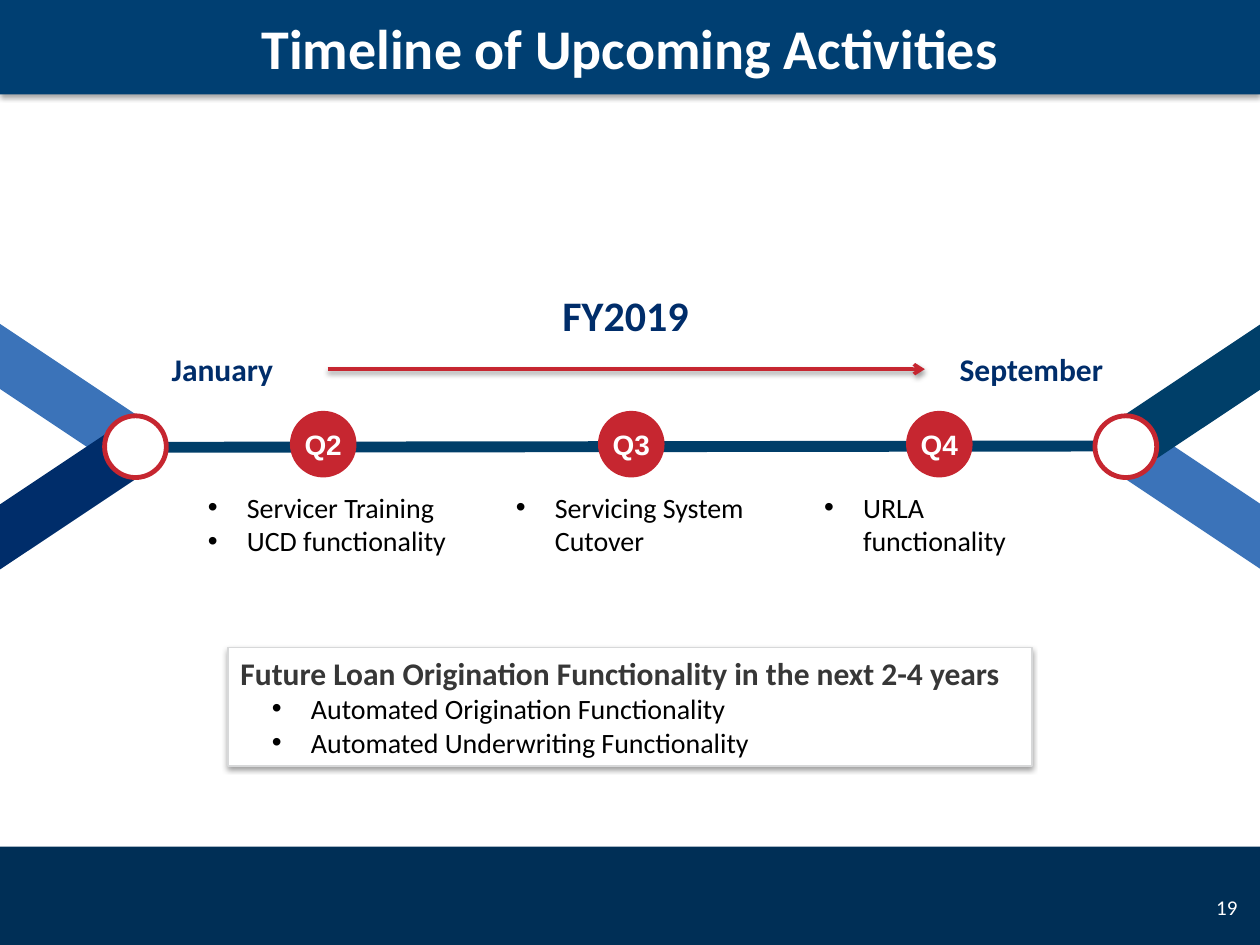
import pptx
import pptx.util
import pptx.dml.color
import pptx.enum.shapes
import pptx.enum.text
import pptx.oxml
import pptx.oxml.ns

Inches, Pt = pptx.util.Inches, pptx.util.Pt
RGB = pptx.dml.color.RGBColor.from_string
qn = pptx.oxml.ns.qn
KIND = pptx.enum.shapes.MSO_SHAPE
ALIGN = pptx.enum.text.PP_ALIGN
ANCHOR = pptx.enum.text.MSO_ANCHOR
SPACE = pptx.oxml.ns.nsdecls("a")

COLORS = {
    "white": "FFFFFF", "black": "000000", "gray": "373737", "edge": "D7D8D9",
    "head": "003F72", "foot": "002F56", "navy": "002D6A", "teal": "003F69",
    "axis": "003E69", "blue": "3B73B9", "red": "C62630",
}
STYLES = {
    "title": {"name": "Calibri", "size": Pt(32), "bold": True},
    "year": {"name": "Calibri", "size": Pt(24), "bold": True},
    "label": {"name": "Calibri", "size": Pt(18), "bold": True},
    "item": {"name": "Calibri", "size": Pt(16), "bold": False},
    "mark": {"name": "Arial", "size": Pt(16), "bold": True},
    "page": {"name": "Calibri", "size": Pt(12), "bold": False},
}

deck = pptx.Presentation()
deck.slide_width, deck.slide_height = Inches(10), Inches(7.5)
slide = deck.slides.add_slide(deck.slide_layouts[6])
shapes = slide.shapes


def draw(kind, place, fill, edge=None, width=0):
    """Add a filled shape, or a text box when kind is None."""
    place = [Inches(n) for n in place]
    if kind is None:
        return shapes.add_textbox(*place)
    shape = shapes.add_shape(kind, *place)
    shape.shadow.inherit = False
    shape.fill.solid()
    shape.fill.fore_color.rgb = RGB(COLORS[fill])
    if edge:
        shape.line.color.rgb = RGB(COLORS[edge])
        shape.line.width = Pt(width)
    else:
        shape.line.fill.background()
    return shape


def write(shape, rows, align=ALIGN.CENTER, anchor=ANCHOR.TOP, inset=None):
    """Fill a shape with rows of (text, style, color, bullet margin)."""
    frame = shape.text_frame
    frame.word_wrap = True
    frame.vertical_anchor = anchor
    if inset is not None:
        for side in ("left", "top", "right", "bottom"):
            setattr(frame, "margin_" + side, Inches(inset))
    for i, (text, style, color, margin) in enumerate(rows):
        para = frame.add_paragraph() if i else frame.paragraphs[0]
        para.alignment = align
        if margin:
            props = para._p.get_or_add_pPr()
            props.set("marL", str(Inches(margin)))
            props.set("indent", str(Inches(-0.31)))
            props.append(pptx.oxml.parse_xml(f'<a:buFont {SPACE} typeface="Arial"/>'))
            props.append(pptx.oxml.parse_xml(f'<a:buChar {SPACE} char="•"/>'))
        run = para.add_run()
        run.text = text
        for key, value in STYLES[style].items():
            setattr(run.font, key, value)
        run.font.color.rgb = RGB(COLORS[color])


# Header, footer and page number
draw(KIND.RECTANGLE, (0, 6.72, 10, 0.8), "foot")
head = draw(KIND.RECTANGLE, (0, 0, 10, 0.75), "head")
write(head, [("Timeline of Upcoming Activities", "title", "white", 0)],
      anchor=ANCHOR.MIDDLE)
page = draw(None, (7.59, 7, 2.33, 0.4), None)
write(page, [("19", "page", "white", 0)], ALIGN.RIGHT, ANCHOR.MIDDLE)

# Time axis and arrow
lines = []
for x1, y1, x2, y2, color, width in (
    (1.24, 3.55, 8.69, 3.54, "axis", 6.25),
    (2.6, 2.93, 7.34, 2.93, "red", 2),
):
    line = shapes.add_connector(pptx.enum.shapes.MSO_CONNECTOR.STRAIGHT,
                                Inches(x1), Inches(y1), Inches(x2), Inches(y2))
    line.line.color.rgb = RGB(COLORS[color])
    line.line.width = Pt(width)
    line._element.spPr.append(pptx.oxml.parse_xml(f"<a:effectLst {SPACE}/>"))
    lines.append(line)
arrow = lines[1]
arrow.line._get_or_add_ln().append(
    pptx.oxml.parse_xml(f'<a:tailEnd {SPACE} type="arrow"/>'))

# Slanted bands at both ends
for left, top, turn, flips, color in (
    (-0.26, 2.97, 33.7, ["flipH"], "blue"),
    (-0.26, 3.69, -33.7, [], "navy"),
    (8.68, 3.69, 33.7, ["flipV"], "blue"),
    (8.68, 2.97, -33.7, ["flipH", "flipV"], "teal"),
):
    band = draw(KIND.PARALLELOGRAM, (left, top, 1.59, 0.43), color)
    band.adjustments[0] = 0.655
    band.rotation = turn
    for flip in flips:
        band._element.spPr.find(qn("a:xfrm")).set(flip, "1")

# End rings
for left in (0.83, 8.69):
    draw(KIND.OVAL, (left, 3.3, 0.49, 0.49), "white", "red", 2.75)

# Quarters with their activities
quarters = (
    ("Q2", 1.93, ["Servicer Training", "UCD functionality"]),
    ("Q3", 1.9, ["Servicing System Cutover"]),
    ("Q4", 1.88, ["URLA functionality"]),
)
for i, (name, width, items) in enumerate(quarters):
    left = 2.32 + 2.445 * i
    dot = draw(KIND.OVAL, (left, 3.28, 0.49, 0.49), "red", "red", 2.75)
    write(dot, [(name, "mark", "white", 0)], anchor=ANCHOR.MIDDLE, inset=0)
    box = draw(None, (left - 0.67, 3.89, width, 0.54), None)
    write(box, [(item, "item", "black", 0.31) for item in items],
          ALIGN.LEFT, inset=0)

# Year and month labels
for text, left, top, height, style in (
    ("FY2019", 4.12, 2.3, 0.4, "year"),
    ("January", 0.92, 2.78, 0.3, "label"),
    ("September", 7.34, 2.78, 0.3, "label"),
):
    box = draw(None, (left, top, 1.69, height), None)
    write(box, [(text, style, "navy", 0)], inset=0)

# Future work panel
panel = draw(KIND.RECTANGLE, (1.81, 5.14, 6.38, 0.94), "white", "edge", 0.75)
write(panel, [
    ("Future Loan Origination Functionality in the next 2-4 years", "label", "gray", 0),
    ("Automated Origination Functionality", "item", "black", 0.56),
    ("Automated Underwriting Functionality", "item", "black", 0.56),
], ALIGN.LEFT)

# Soft shadows below the header, panel and arrow
for shape, drop, alpha in ((head, 1.8, 35), (panel, 1.6, 38), (arrow, 1.6, 38)):
    shape._element.spPr.find(qn("a:effectLst")).append(pptx.oxml.parse_xml(
        f'<a:outerShdw {SPACE} blurRad="{Pt(3.1)}" dist="{Pt(drop)}" dir="5400000" '
        f'rotWithShape="0"><a:srgbClr val="{COLORS["black"]}">'
        f'<a:alpha val="{alpha * 1000}"/></a:srgbClr></a:outerShdw>'))

deck.save("out.pptx")
